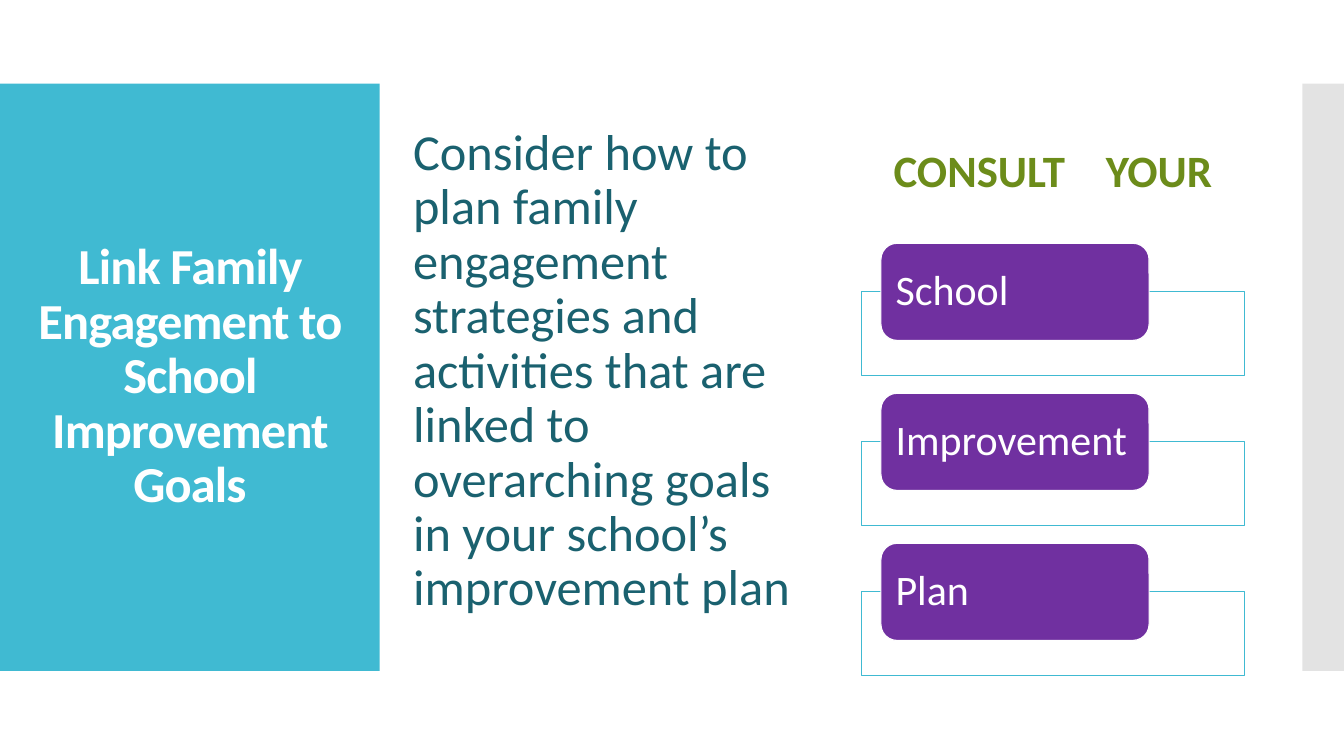
import dataclasses

import pptx
import pptx.dml.color
import pptx.enum.shapes
import pptx.enum.text
import pptx.oxml.ns
import pptx.util
from lxml import etree

Cm = pptx.util.Cm
Pt = pptx.util.Pt
RGB = pptx.dml.color.RGBColor.from_string
Shape = pptx.enum.shapes.MSO_SHAPE
Align = pptx.enum.text.PP_ALIGN
Anchor = pptx.enum.text.MSO_ANCHOR


@dataclasses.dataclass(frozen=True)
class Theme:
    font: str = "Calibri"
    white: str = "FFFFFF"
    aqua: str = "40BAD2"
    gray: str = "C8C8C8"
    purple: str = "7030A0"
    green: str = "6C8C1A"
    teal: str = "1A616F"
    large: int = 36
    heading: int = 32
    label: int = 30


theme = Theme()
deck = pptx.Presentation()
deck.slide_width = Cm(33.87)
deck.slide_height = Cm(19.05)
page = deck.slides.add_slide(deck.slide_layouts[6])


def add_block(kind, left, top, width, height, fill, line=None, opacity=100):
    """Add a filled shape, measured in centimetres, with opacity in percent."""
    block = page.shapes.add_shape(kind, Cm(left), Cm(top), Cm(width), Cm(height))
    block.shadow.inherit = False
    block.fill.solid()
    block.fill.fore_color.rgb = RGB(fill)
    if opacity < 100:
        color = block.fill._xPr.find(".//" + pptx.oxml.ns.qn("a:srgbClr"))
        etree.SubElement(color, pptx.oxml.ns.qn("a:alpha"), val=str(opacity * 1000))
    if line:
        block.line.color.rgb = RGB(line)
        block.line.width = Pt(0.85)
    else:
        block.line.fill.background()
    return block


def write(box, words, size, color, align=Align.LEFT, anchor=Anchor.MIDDLE, bold=False, inset=0.25):
    """Fill a shape with one paragraph made of the given runs and return it."""
    frame = box.text_frame
    frame.word_wrap = True
    frame.vertical_anchor = anchor
    frame.margin_left = frame.margin_right = Cm(inset)
    frame.margin_top = frame.margin_bottom = Cm(0.13)
    para = frame.paragraphs[0]
    para.alignment = align
    para.line_spacing = 0.9
    for word in words:
        span = para.add_run()
        span.text = word
        span.font.name = theme.font
        span.font.size = Pt(size)
        span.font.bold = bold
        span.font.color.rgb = RGB(color)
    return para


# Side panels
add_block(Shape.RECTANGLE, 0, 2.11, 9.57, 14.8, theme.aqua)
add_block(Shape.RECTANGLE, 32.82, 2.11, 1.05, 14.8, theme.gray, opacity=50)

# Title
title = page.shapes.add_textbox(Cm(0.7), Cm(3.12), Cm(8.18), Cm(12.78))
title_para = write(title, ["Link Family Engagement to School Improvement Goals"],
                   theme.large, theme.white, Align.CENTER, bold=True, inset=0.1)
title_para.runs[0].font._element.set("spc", "-60")

# Plan cards
card_top, card_pitch = 6.13, 3.78
for index, label in enumerate(["School", "Improvement", "Plan"]):
    top = card_top + index * card_pitch
    add_block(Shape.RECTANGLE, 21.71, top + 1.21, 9.65, 2.12, theme.white, theme.aqua, opacity=90)
    card = add_block(Shape.ROUNDED_RECTANGLE, 22.2, top, 6.76, 2.45, theme.purple, theme.white)
    write(card, [label], theme.label, theme.white)

# Heading above the cards, with a widened word gap
heading = page.shapes.add_textbox(Cm(21.71), Cm(2.84), Cm(9.65), Cm(2.26))
heading_para = write(heading, ["CONSULT", " ", "YOUR"], theme.heading, theme.green,
                     Align.CENTER, Anchor.BOTTOM, bold=True)
heading_para.runs[1].font._element.set("spc", "2170")

# Main message
message = page.shapes.add_textbox(Cm(10.16), Cm(3.12), Cm(10.62), Cm(12.5))
write(message, ["Consider how to plan family engagement strategies and activities that are "
                "linked to overarching goals in your school’s improvement plan"],
      theme.large, theme.teal)

deck.save("out.pptx")
